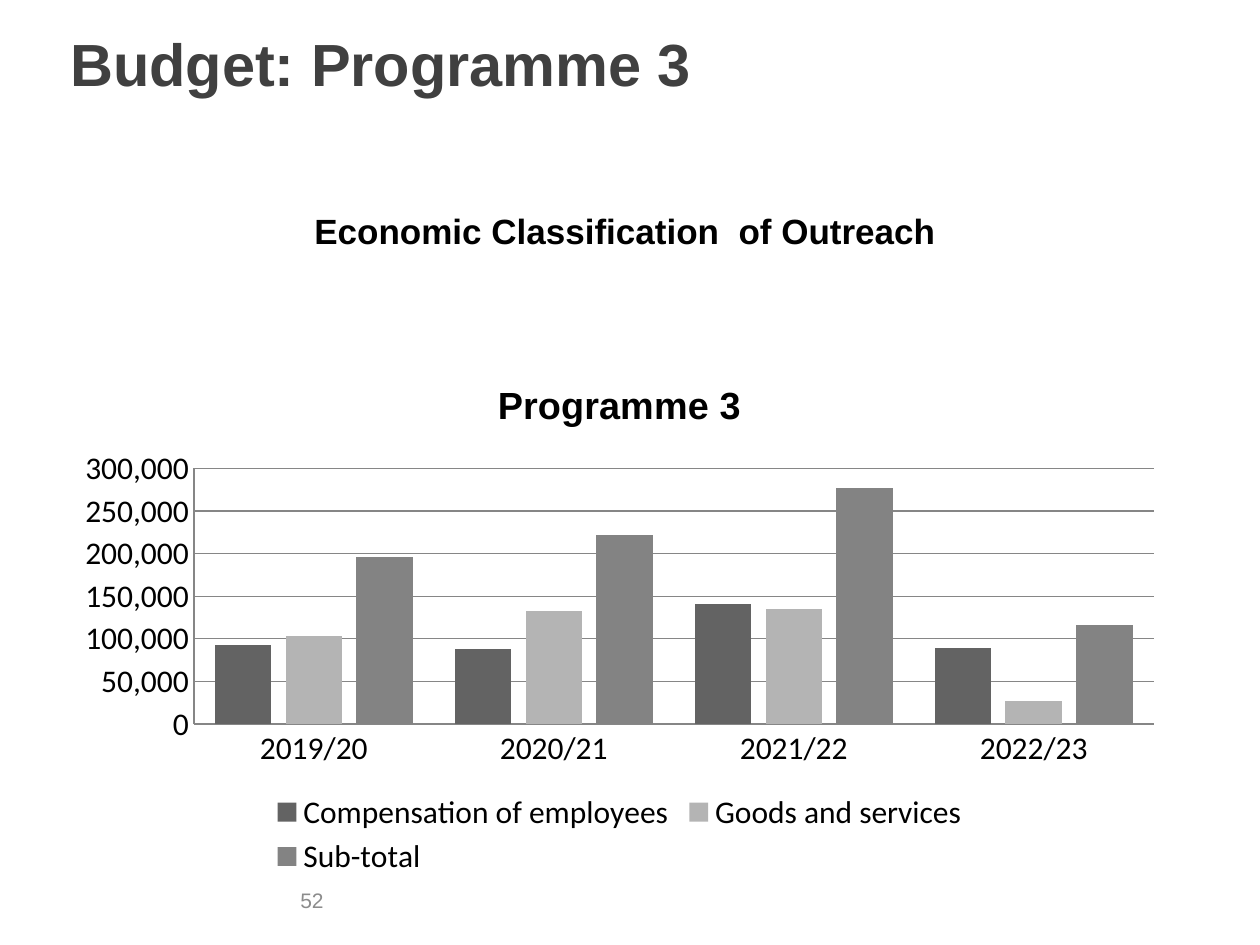
from pptx import Presentation
from pptx.chart.data import CategoryChartData
from pptx.dml.color import RGBColor
from pptx.enum.chart import XL_CHART_TYPE, XL_LEGEND_POSITION, XL_TICK_MARK
from pptx.enum.text import MSO_ANCHOR, PP_ALIGN
from pptx.util import Pt

COLUMN = XL_CHART_TYPE.COLUMN_CLUSTERED
BOTTOM = XL_LEGEND_POSITION.BOTTOM
NO_TICK = XL_TICK_MARK.NONE
TOP, MIDDLE = MSO_ANCHOR.TOP, MSO_ANCHOR.MIDDLE
LEFT, CENTER, RIGHT = PP_ALIGN.LEFT, PP_ALIGN.CENTER, PP_ALIGN.RIGHT

YEARS = ["2019/20", "2020/21", "2021/22", "2022/23"]
SERIES = [
    ("Compensation of employees", "636363", [93000, 88000, 141000, 89000]),
    ("Goods and services", "B4B4B4", [103000, 133000, 135000, 27000]),
    ("Sub-total", "838383", [196000, 222000, 277000, 116000]),
]


def color(code):
    return RGBColor.from_string(code)


def style(font, size, name="Arial", ink="000000", bold=False):
    font.size, font.name, font.bold = Pt(size), name, bold
    font.color.rgb = color(ink)


def write(frame, text, align=LEFT, anchor=TOP, **look):
    frame.word_wrap = True
    frame.vertical_anchor = anchor
    para = frame.paragraphs[0]
    para.alignment = align
    run = para.add_run()
    run.text = text
    style(run.font, **look)


def add_title(slide, box, text):
    title = slide.shapes.title
    title.left, title.top, title.width, title.height = map(Pt, box)
    write(title.text_frame, text, size=34, ink="404040", bold=True)


def add_label(slide, box, text, **look):
    label = slide.shapes.add_textbox(*map(Pt, box))
    write(label.text_frame, text, **look)


def add_budget(slide, box):
    data = CategoryChartData(number_format="#,##0")
    data.categories = YEARS
    for name, _, values in SERIES:
        data.add_series(name, values)
    chart = slide.shapes.add_chart(COLUMN, *map(Pt, box), data).chart
    style(chart.font, 18, "Calibri")

    chart.has_title = True
    write(chart.chart_title.text_frame, "Programme 3", CENTER,
          size=21.6, bold=True)
    chart.chart_title.include_in_layout = False
    chart.has_legend = True
    chart.legend.position = BOTTOM
    chart.legend.include_in_layout = False

    plot = chart.plots[0]
    plot.gap_width, plot.overlap = 75, -25
    plot.vary_by_categories = False
    for series, (_, code, _) in zip(plot.series, SERIES):
        series.format.fill.solid()
        series.format.fill.fore_color.rgb = color(code)

    axis = chart.value_axis
    axis.minimum_scale, axis.maximum_scale, axis.major_unit = 0, 300000, 50000
    axis.tick_labels.number_format = "#,##0"
    axis.tick_labels.number_format_is_linked = False
    axis.has_major_gridlines = True
    lines = [axis.major_gridlines.format.line]
    for side in (axis, chart.category_axis):
        side.major_tick_mark = side.minor_tick_mark = NO_TICK
        lines.append(side.format.line)
    for line in lines:
        line.color.rgb = color("868686")
        line.width = Pt(0.75)


def main():
    deck = Presentation()
    deck.slide_width, deck.slide_height = Pt(720), Pt(540)
    slide = deck.slides.add_slide(deck.slide_layouts[5])
    add_title(slide, (33, 12, 492, 48), "Budget: Programme 3")
    add_label(slide, (156, 116, 408, 32),
              "Economic Classification  of Outreach ",
              align=CENTER, size=20, bold=True)
    add_budget(slide, (36, 204, 636, 300))
    add_label(slide, (24, 500, 168, 29), "52", align=RIGHT, anchor=MIDDLE,
              size=12, ink="8C8C8C")
    deck.save("out.pptx")


if __name__ == "__main__":
    main()
